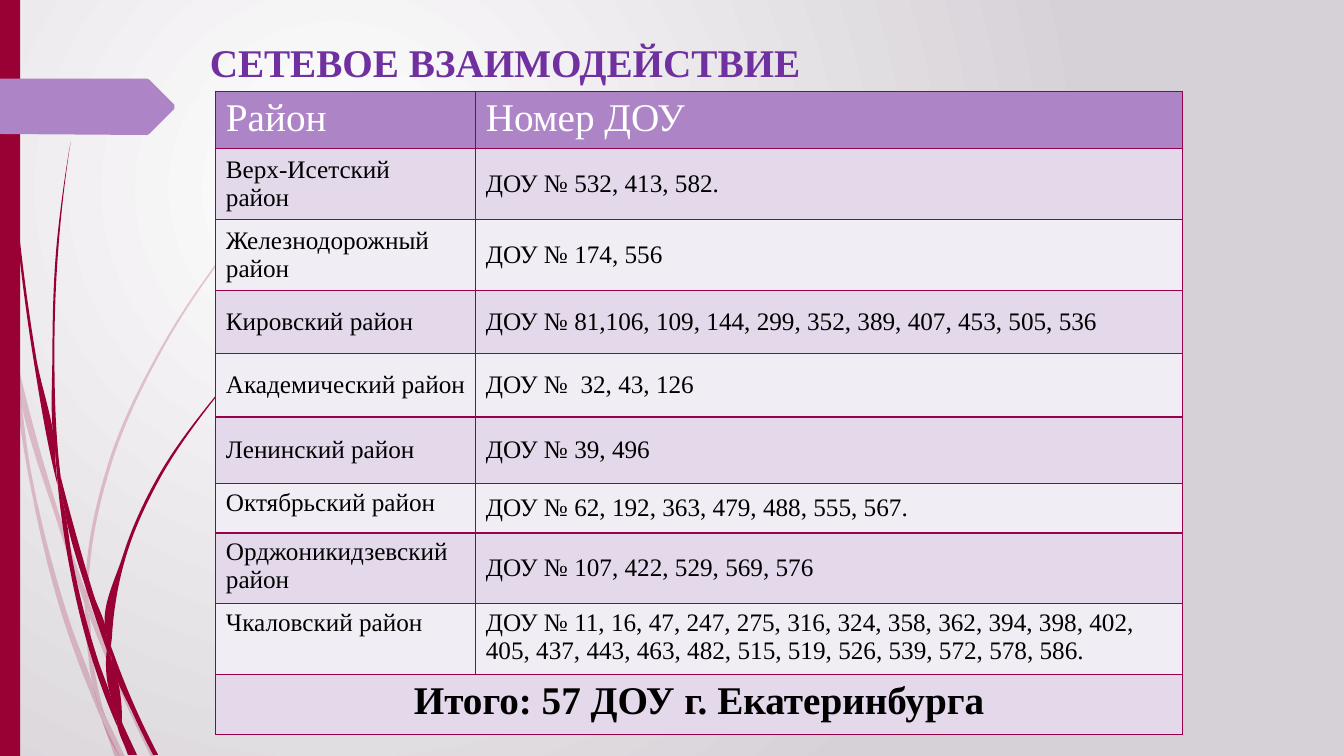
"""Builds the slide on the network of kindergartens, with its table by district."""
from math import dist

from lxml import etree
from pptx import Presentation
from pptx.dml.color import RGBColor
from pptx.enum import shapes, text
from pptx.oxml import parse_xml
from pptx.oxml.ns import nsdecls, qn
from pptx.util import Cm, Pt

TITLE = "СЕТЕВОЕ ВЗАИМОДЕЙСТВИЕ "
HEADER = ("Район", "Номер ДОУ")
DISTRICTS = [
    ("Верх-Исетский  район", "ДОУ № 532, 413, 582."),
    ("Железнодорожный район", "ДОУ № 174, 556"),
    ("Кировский район", "ДОУ № 81,106, 109, 144, 299, 352, 389, 407, 453, 505, 536"),
    ("Академический район", "ДОУ №  32, 43, 126"),
    ("Ленинский район", "ДОУ № 39, 496"),
    ("Октябрьский район", "ДОУ № 62, 192, 363, 479, 488, 555, 567."),
    ("Орджоникидзевский район", "ДОУ № 107, 422, 529, 569, 576"),
    ("Чкаловский район", "ДОУ № 11, 16, 47, 247, 275, 316, 324, 358, 362, 394, 398, 402, "
     "405, 437, 443, 463, 482, 515, 519, 526, 539, 572, 578, 586."),
]
TOTAL = "Итого: 57 ДОУ г. Екатеринбурга"
TOP_CELLS = {(6, 0), (7, 0), (8, 0), (8, 1)}

COLUMN_WIDTHS = (6.55, 17.8)
ROW_HEIGHTS = (1.45, 1.78, 1.78, 1.6, 1.6, 1.68, 1.24, 1.78, 1.78, 1.52)

UNIT = 0.0254
PALE_BLADES = [
    ([(11, 350), (9, 322), (0, 282)], [(0, 299), (10, 344), (11, 350)]),
    ([(14, 345), (17, 376), (58, 522), (84, 599)], [(85, 586), (62, 520), (14, 345)]),
    ([(88, 610), (123, 694), (150, 751)], [(155, 751), (127, 692), (92, 607), (88, 596)]),
    ([(105, 711), (119, 751)], [(124, 751), (105, 711)]),
    ([(11, 350), (28, 470), (65, 621), (92, 693), (101, 714)],
     [(99, 707), (93, 683), (70, 619), (31, 469), (17, 376), (11, 350)]),
    ([(84, 599), (87, 646), (93, 683), (96, 692), (105, 711)],
     [(103, 706), (91, 646), (88, 610), (84, 599)]),
    ([(88, 596), (88, 584), (110, 462), (160, 349), (229, 245), (268, 198), (312, 154)],
     [(312, 153), (268, 197), (228, 244), (158, 348), (107, 461), (85, 584), (85, 586)]),
    ([(101, 714), (114, 751)], [(119, 751), (101, 714)]),
    ([(88, 608), (88, 596)], [(85, 586), (84, 599)]),
    ([(96, 692), (93, 683), (99, 707), (101, 714), (119, 751)], [(105, 711), (96, 692)]),
]
DARK_BLADES = [
    ([(3, 0), (4, 48), (7, 110), (17, 233), (33, 355), (56, 477), (57, 481)],
     [(55, 457), (55, 453), (36, 355), (19, 232), (8, 109), (5, 48), (4, 0)]),
    ([(60, 472), (64, 505), (88, 592), (106, 645)],
     [(106, 633), (106, 631), (93, 590), (60, 472)]),
    ([(110, 641), (111, 656), (132, 708), (152, 749)], [(157, 749), (136, 706), (113, 649)]),
    ([(57, 477), (68, 557), (93, 659), (111, 708), (117, 722)],
     [(116, 717), (110, 691), (98, 657), (72, 556), (64, 505), (57, 477)]),
    ([(70, 141), (62, 193), (56, 245), (52, 349), (55, 449), (60, 472)],
     [(60, 472), (58, 453), (54, 349), (58, 245), (63, 193), (70, 141)]),
    ([(122, 719), (133, 749)], [(136, 749), (122, 719)]),
    ([(57, 477), (64, 505)], [(60, 472), (55, 449), (55, 453)]),
    ([(111, 633), (125, 552), (158, 476), (205, 406), (231, 374), (261, 344)],
     [(260, 344), (231, 373), (204, 405), (156, 474), (122, 551), (106, 631), (110, 641)]),
    ([(117, 722), (127, 749)], [(131, 749), (117, 722)]),
    ([(106, 645), (110, 691), (116, 706), (122, 719)],
     [(121, 716), (111, 656), (109, 651), (106, 645)]),
    ([(106, 645), (109, 651), (111, 656)], [(110, 641), (106, 631), (106, 633)]),
    ([(116, 706), (110, 691), (116, 717), (117, 722), (130, 749)],
     [(133, 749), (122, 719), (116, 706)]),
]
MARKER = [(0, 78), (146, 78), (148, 79), (173, 104), (173, 108), (148, 133), (146, 134), (0, 133)]

THEME = {
    "font": "Times New Roman", "large": 28, "body": 18,
    "title": "7030A0", "accent": "AD84C6", "stem": "990033", "border": "99004C",
    "bands": ("E3D9EA", "F1EDF5"), "black": "000000", "white": "FFFFFF", "edge": "D6D1D6",
}


def rgb(color):
    return RGBColor.from_string(color)


def write(frame, words, size=THEME["body"], color=THEME["black"], bold=False,
          align=text.PP_ALIGN.LEFT):
    paragraph = frame.paragraphs[0]
    paragraph.alignment = align
    run = paragraph.add_run()
    run.text = words
    run.font.name, run.font.size, run.font.bold = THEME["font"], Pt(size), bold
    run.font.color.rgb = rgb(color)


def paint(shape, color, opacity=100):
    shape.shadow.inherit = False
    shape.fill.solid()
    shape.fill.fore_color.rgb = rgb(color)
    shape.line.fill.background()
    if opacity < 100:
        tint = shape.fill._xPr.find(".//" + qn("a:srgbClr"))
        etree.SubElement(tint, qn("a:alpha")).set("val", str(opacity * 1000))


def slopes(knots):
    """Returns the direction of a smooth curve at every knot."""
    lengths = [dist(a, b) for a, b in zip(knots, knots[1:])]
    chords = [((b[0] - a[0]) / n, (b[1] - a[1]) / n)
              for a, b, n in zip(knots, knots[1:], lengths)]
    inner = [tuple((p * n + q * m) / (m + n) for p, q in zip(u, v))
             for u, v, m, n in zip(chords, chords[1:], lengths, lengths[1:])]
    if not inner:
        return chords * 2
    first = tuple(2 * p - q for p, q in zip(chords[0], inner[0]))
    final = tuple(2 * p - q for p, q in zip(chords[-1], inner[-1]))
    return [first, *inner, final]


def bend(shape, sides):
    """Turns the straight segments along each side into smooth curves."""
    lines = iter(shape._element.findall(".//" + qn("a:lnTo")))
    for number, side in enumerate(sides):
        if number:
            next(lines)
        tangents = slopes(side)
        for a, b, u, v in zip(side, side[1:], tangents, tangents[1:]):
            line, third = next(lines), dist(a, b) / 3
            curve = etree.Element(qn("a:cubicBezTo"))
            for knot, slope, reach in ((a, u, third), (b, v, -third), (b, v, 0)):
                x, y = (Cm((k + s * reach) * UNIT) for k, s in zip(knot, slope))
                etree.SubElement(curve, qn("a:pt"), x=str(x - shape.left), y=str(y - shape.top))
            line.getparent().replace(line, curve)


def draw_outline(slide, points):
    corners = [(Cm(x * UNIT), Cm(y * UNIT)) for x, y in points]
    builder = slide.shapes.build_freeform(*corners[0])
    builder.add_line_segments(corners[1:], close=True)
    return builder.convert_to_shape()


def draw_background(slide):
    fill = slide.background.fill
    fill.gradient()
    for stop, color in zip(fill.gradient_stops, (THEME["white"], THEME["edge"])):
        stop.color.rgb = rgb(color)
    line = slide.element.find(".//" + qn("a:lin"))
    line.getparent().replace(line, parse_xml(
        f'<a:path {nsdecls("a")} path="circle">'
        '<a:fillToRect l="50000" t="50000" r="100000" b="100000"/></a:path>'))


def draw_decor(slide, height):
    for blades, opacity in ((PALE_BLADES, 20), (DARK_BLADES, 100)):
        for left, right in blades:
            blade = draw_outline(slide, left + right)
            bend(blade, (left, right))
            paint(blade, THEME["stem"], opacity)
    band = slide.shapes.add_shape(shapes.MSO_SHAPE.RECTANGLE, 0, 0, Cm(0.51), height)
    paint(band, THEME["stem"])
    paint(draw_outline(slide, MARKER), THEME["accent"])


def draw_title(slide):
    title = slide.shapes.add_textbox(Cm(4.7), Cm(0.84), Cm(16.3), Cm(1.45)).text_frame
    title.word_wrap = True
    title.vertical_anchor = text.MSO_ANCHOR.MIDDLE
    write(title, TITLE, size=THEME["large"], color=THEME["title"], bold=True,
          align=text.PP_ALIGN.CENTER)


def style_cell(cell, color):
    cell.fill.solid()
    cell.fill.fore_color.rgb = rgb(color)
    properties = cell._tc.get_or_add_tcPr()
    for index, side in enumerate("LRTB"):
        properties.insert(index, parse_xml(
            f'<a:ln{side} {nsdecls("a")} w="12700"><a:solidFill>'
            f'<a:srgbClr val="{THEME["border"]}"/></a:solidFill></a:ln{side}>'))


def draw_table(slide):
    rows = [HEADER, *DISTRICTS, (TOTAL, "")]
    last = len(rows) - 1
    table = slide.shapes.add_table(
        len(rows), len(HEADER), Cm(5.44), Cm(2.3),
        Cm(sum(COLUMN_WIDTHS)), Cm(sum(ROW_HEIGHTS))).table
    for column, width in zip(table.columns, COLUMN_WIDTHS):
        column.width = Cm(width)
    looks = {0: {"size": THEME["large"], "color": THEME["white"]},
             last: {"size": THEME["large"], "bold": True, "align": text.PP_ALIGN.CENTER}}
    for r, (row, height) in enumerate(zip(rows, ROW_HEIGHTS)):
        table.rows[r].height = Cm(height)
        for c, words in enumerate(row):
            cell = table.cell(r, c)
            style_cell(cell, THEME["bands"][(r - 1) % 2] if r else THEME["accent"])
            if 0 < r < last and (r, c) not in TOP_CELLS:
                cell.vertical_anchor = text.MSO_ANCHOR.MIDDLE
            if words:
                write(cell.text_frame, words, **looks.get(r, {}))
    table.cell(last, 0).merge(table.cell(last, 1))


def main():
    deck = Presentation()
    deck.slide_width, deck.slide_height = Cm(33.87), Cm(19.05)
    slide = deck.slides.add_slide(deck.slide_layouts[6])
    draw_background(slide)
    draw_decor(slide, deck.slide_height)
    draw_title(slide)
    draw_table(slide)
    deck.save("out.pptx")


if __name__ == "__main__":
    main()
